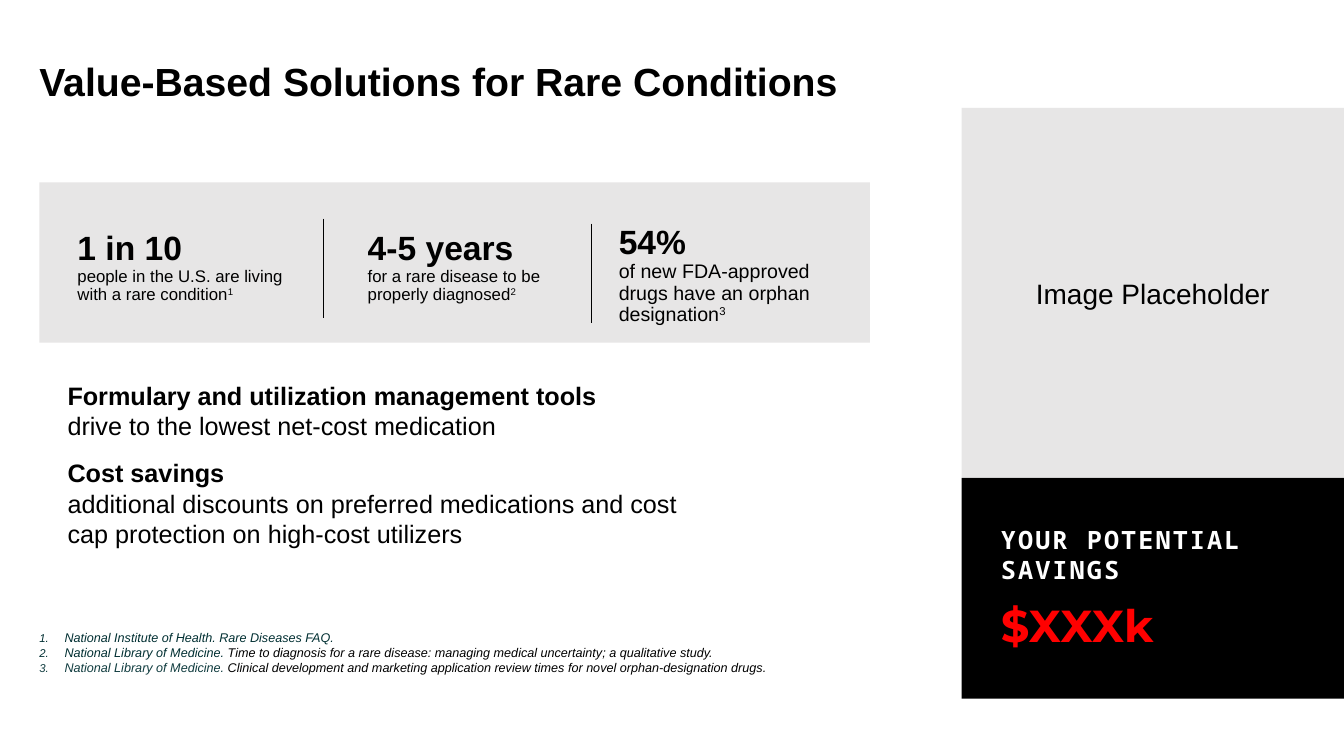
import pptx
import pptx.dml.color
import pptx.enum.shapes
import pptx.enum.text
import pptx.oxml.ns
import pptx.util
from lxml import etree

COLUMNS, ROWS = 40, 22.5
UNIT = pptx.util.Inches(7.5) / ROWS
COLORS = {"black": "000000", "white": "FFFFFF", "panel": "E7E6E6",
          "savings": "FF0000", "source": "002F32", "last_source": "103C3F"}
STATISTICS = [
    ("1 in 10", "people in the U.S. are living with a rare condition", 12, (0.84, 1.32, 6.93, 2.49)),
    ("4-5 years", "for a rare disease to be properly diagnosed", 12, (9.48, 1.32, 6.99, 2.49)),
    ("54%", "of new FDA-approved drugs have an orphan designation", 14, (16.95, 1.14, 6.57, 3.3)),
]
DIVIDERS = [(8.46, 1.08), (16.44, 1.23)]
DIVIDER_LENGTH = 2.94
BENEFITS = [
    (["Formulary and utilization management tools", "drive to the lowest net-cost medication"],
     (0, 0, 21.78, 2.13)),
    (["Cost savings", "additional discounts on preferred medications and cost",
      "cap protection on high-cost utilizers"], (0, 2.31, 22.83, 3.03)),
]
SOURCES = [
    ("National Institute of Health. Rare Diseases FAQ.", "", "source"),
    ("National Library of Medicine. ",
     "Time to diagnosis for a rare disease: managing medical uncertainty; a qualitative study.", "source"),
    ("National Library of Medicine. ",
     "Clinical development and marketing application review times for novel orphan-designation drugs.",
     "last_source"),
]


def color(name):
    return pptx.dml.color.RGBColor.from_string(COLORS[name])


def length(units):
    return pptx.util.Emu(round(units * UNIT))


def place(box):
    return [length(units) for units in box]


def inside(region, box):
    return region[0] + box[0], region[1] + box[1], box[2], box[3]


def style(font, size, name="black", bold=False, face="Arial"):
    font.size = pptx.util.Pt(size)
    font.name = face
    font.bold = bold
    font.color.rgb = color(name)


def set_margins(frame, margins):
    frame.margin_left, frame.margin_top, frame.margin_right, frame.margin_bottom = map(
        pptx.util.Inches, margins)


def add_text(slide, box, margins=(0.1, 0.05, 0.1, 0.05)):
    frame = slide.shapes.add_textbox(*place(box)).text_frame
    frame.word_wrap = True
    set_margins(frame, margins)
    return frame


def add_panel(slide, box, fill):
    panel = slide.shapes.add_shape(pptx.enum.shapes.MSO_SHAPE.RECTANGLE, *place(box))
    panel.shadow.inherit = False
    panel.fill.solid()
    panel.fill.fore_color.rgb = color(fill)
    panel.line.fill.background()
    return panel


def add_span(para, text):
    span = para.add_run()
    span.text = text
    return span


def add_title(slide, box):
    title = slide.shapes.title
    title.left, title.top, title.width, title.height = place(box)
    frame = title.text_frame
    set_margins(frame, (0, 0, 0, 0))
    frame.vertical_anchor = pptx.enum.text.MSO_ANCHOR.TOP
    para = frame.paragraphs[0]
    para.text = "Value-Based Solutions for Rare Conditions"
    para.alignment = pptx.enum.text.PP_ALIGN.LEFT
    style(para.font, 28, bold=True)


def add_divider(slide, left, top):
    x, y, end = place((left, top, top + DIVIDER_LENGTH))
    divider = slide.shapes.add_connector(pptx.enum.shapes.MSO_CONNECTOR.STRAIGHT, x, y, x, end)
    divider.line.color.rgb = color("black")
    divider.line.width = pptx.util.Pt(0.5)
    etree.SubElement(divider._element.spPr, pptx.oxml.ns.qn("a:effectLst"))


def add_statistics(slide, region):
    add_panel(slide, region, "panel")
    for left, top in DIVIDERS:
        add_divider(slide, region[0] + left, region[1] + top)
    for number, (figure, caption, size, box) in enumerate(STATISTICS, 1):
        frame = add_text(slide, inside(region, box))
        heading, detail = frame.paragraphs[0], frame.add_paragraph()
        heading.text = figure
        style(heading.font, 24, bold=True)
        add_span(detail, caption)
        mark = add_span(detail, str(number))
        mark.font._element.set("baseline", "30000")
        style(detail.font, size)
        heading.line_spacing = detail.line_spacing = 0.9


def add_benefits(slide, region):
    for lines, box in BENEFITS:
        frame = add_text(slide, inside(region, box), (0, 0.05, 0.1, 0.05))
        para = frame.paragraphs[0]
        for index, line in enumerate(lines):
            if index:
                para.add_line_break()
            add_span(para, line).font.bold = index == 0
        para.space_after = pptx.util.Pt(6)
        style(para.font, 18)


def add_image_area(slide, region):
    frame = add_panel(slide, region, "panel").text_frame
    frame.vertical_anchor = pptx.enum.text.MSO_ANCHOR.MIDDLE
    para = frame.paragraphs[0]
    para.text = "Image Placeholder"
    para.alignment = pptx.enum.text.PP_ALIGN.CENTER
    style(para.font, 20)


def add_savings(slide, region):
    add_panel(slide, region, "black")
    frame = add_text(slide, inside(region, (1.17, 1.38, 9.06, 3.81)), (0, 0, 0, 0))
    heading, amount = frame.paragraphs[0], frame.add_paragraph()
    span = add_span(heading, "YOUR POTENTIAL SAVINGS")
    span.font._element.set("spc", "150")
    style(heading.font, 18, "white", True, "Noto Sans Mono")
    amount.text = "$XXXk"
    style(amount.font, 32, "savings", True, "Montserrat")
    amount.space_before = pptx.util.Pt(3)
    heading.space_after = amount.space_after = pptx.util.Pt(6)


def number_paragraph(para):
    properties = para._p.get_or_add_pPr()
    indent = pptx.util.Inches(0.25)
    properties.set("marL", str(indent))
    properties.set("indent", str(-indent))
    etree.SubElement(properties, pptx.oxml.ns.qn("a:buSzPct"), val="90000")
    etree.SubElement(properties, pptx.oxml.ns.qn("a:buFont"), typeface="+mj-lt")
    etree.SubElement(properties, pptx.oxml.ns.qn("a:buAutoNum"), type="arabicPeriod")


def add_sources(slide, region):
    frame = add_text(slide, region, (0, 0, 0, 0))
    frame.vertical_anchor = pptx.enum.text.MSO_ANCHOR.BOTTOM
    for index, (publisher, article, name) in enumerate(SOURCES):
        para = frame.add_paragraph() if index else frame.paragraphs[0]
        number_paragraph(para)
        style(para.font, 9, name)
        para.font.italic = True
        add_span(para, publisher).font.color.rgb = color(name)
        if article:
            add_span(para, article).font.color.rgb = color("black")


def main():
    deck = pptx.Presentation()
    deck.slide_width, deck.slide_height = place((COLUMNS, ROWS))
    slide = deck.slides.add_slide(deck.slide_layouts.get_by_name("Title Only"))
    add_title(slide, (1.17, 1.71, 24.9, 3.3))
    add_statistics(slide, (1.17, 5.43, 24.72, 4.77))
    add_benefits(slide, (2.01, 11.16))
    add_image_area(slide, (28.62, 3.21, 11.38, 11.01))
    add_savings(slide, (28.62, 14.22, 11.38, 6.57))
    add_sources(slide, (1.17, 18.87, 37.65, 1.23))
    deck.save("out.pptx")


if __name__ == "__main__":
    main()
